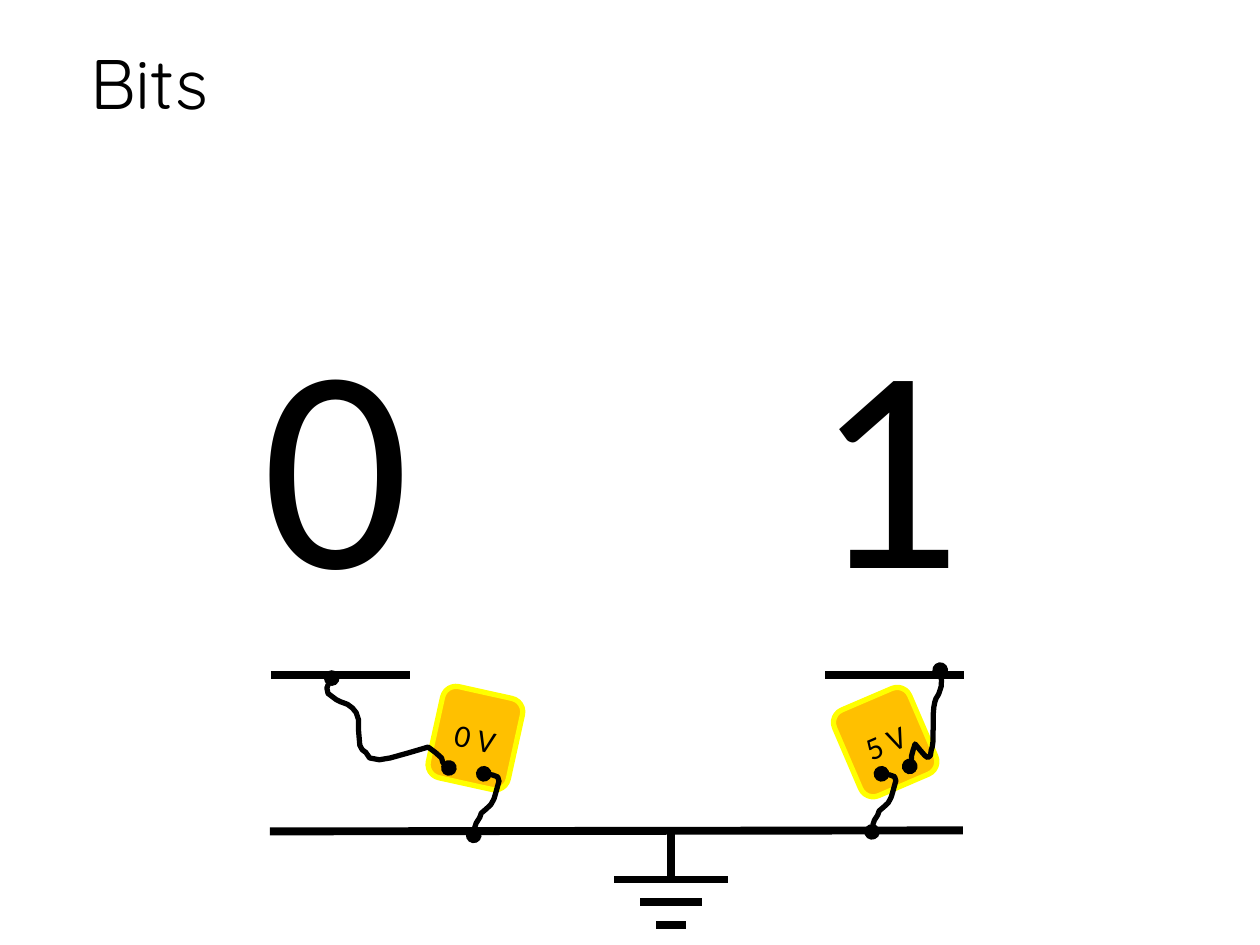
from dataclasses import dataclass

from lxml.etree import SubElement
from pptx import Presentation
from pptx.dml.color import RGBColor as Rgb
from pptx.enum.shapes import MSO_CONNECTOR as Link, MSO_SHAPE as Shape
from pptx.enum.text import MSO_ANCHOR as Anchor, PP_ALIGN as Align
from pptx.oxml.ns import qn
from pptx.util import Cm, Pt


@dataclass(frozen=True)
class Theme:
    ink: Rgb = Rgb(0, 0, 0)
    body: Rgb = Rgb(0xFF, 0xC0, 0)
    rim: Rgb = Rgb(0xFF, 0xFF, 0)
    head: str = "Quicksand"
    font: str = "Calibri"
    title: int = 40
    digit: int = 166
    label: int = 18
    bar: float = 4.5
    wire: float = 3


class Board:
    def __init__(self, slide, theme):
        self.slide = slide
        self.theme = theme

    def letter(self, frame, text, font, size):
        para = frame.paragraphs[0]
        para.text = text
        para.font.name = font
        para.font.size = Pt(size)
        para.font.color.rgb = self.theme.ink
        return para

    def title(self, text, *box):
        frame = self.slide.shapes.add_textbox(*map(Cm, box)).text_frame
        frame.word_wrap = True
        frame.vertical_anchor = Anchor.MIDDLE
        para = self.letter(frame, text, self.theme.head, self.theme.title)
        para.line_spacing = 0.9

    def digit(self, text, *box):
        frame = self.slide.shapes.add_textbox(*map(Cm, box)).text_frame
        frame.word_wrap = False
        self.letter(frame, text, self.theme.font, self.theme.digit)

    def bar(self, *ends):
        line = self.slide.shapes.add_connector(Link.STRAIGHT, *map(Cm, ends))
        line.line.color.rgb = self.theme.ink
        line.line.width = Pt(self.theme.bar)
        SubElement(line._element.spPr, qn("a:effectLst"))

    def meter(self, text, left, top, turn):
        box = map(Cm, (left, top, 1.65, 1.88))
        shape = self.slide.shapes.add_shape(Shape.ROUNDED_RECTANGLE, *box)
        shape.rotation = turn
        shape.shadow.inherit = False
        shape.fill.solid()
        shape.fill.fore_color.rgb = self.theme.body
        shape.line.color.rgb = self.theme.rim
        shape.line.width = Pt(self.theme.wire)
        frame = shape.text_frame
        frame.vertical_anchor = Anchor.MIDDLE
        para = self.letter(frame, text, self.theme.font, self.theme.label)
        para.alignment = Align.CENTER

    def wire(self, curve, left, top, wide, high):
        """Stretch a unit curve over a box; a negative width mirrors it."""
        dots = [(Cm(left + u * wide), Cm(top + v * high)) for u, v in curve]
        pen = self.slide.shapes.build_freeform(*dots[0])
        pen.add_line_segments(dots[1:], close=False)
        shape = pen.convert_to_shape()
        shape.shadow.inherit = False
        shape.fill.background()
        shape.line.color.rgb = self.theme.ink
        shape.line.width = Pt(self.theme.wire)
        stroke = shape._element.spPr.find(qn("a:ln"))
        SubElement(stroke, qn("a:round"))
        for end in ("a:headEnd", "a:tailEnd"):
            SubElement(stroke, qn(end), type="oval")


# Unit curves: from the meter up to the signal, and down to ground
PROBE = [
    (0, 0.99), (0.05, 0.93), (0.06, 0.88), (0.11, 0.82), (0.17, 0.76),
    (0.32, 0.82), (0.48, 0.88), (0.57, 0.9), (0.65, 0.88), (0.68, 0.82),
    (0.71, 0.79), (0.73, 0.74), (0.74, 0.58), (0.74, 0.46), (0.76, 0.38),
    (0.79, 0.33), (0.83, 0.29), (0.89, 0.26), (0.92, 0.24), (0.99, 0.17),
    (1, 0.11), (0.98, 0.04), (0.96, 0),
]
LEAD = [
    (0.4, 0), (0.75, 0.02), (0.95, 0.05), (1, 0.12), (0.86, 0.33),
    (0.8, 0.41), (0.68, 0.5), (0.5, 0.57), (0.3, 0.64), (0.24, 0.71),
    (0.1, 0.8), (0.02, 0.9), (0, 1),
]


def main():
    deck = Presentation()
    deck.slide_width, deck.slide_height = Cm(25.4), Cm(19.05)
    board = Board(deck.slides.add_slide(deck.slide_layouts[6]), Theme())

    # Title and digits
    board.title("Bits", 1.57, -0.08, 21.89, 3.68)
    for text, left in (("0", 5.05), ("1", 16.18)):
        board.digit(text, left, 5.49, 3.51, 7.34)

    # Signal bars and ground rail
    for left in (5.46, 16.64):
        board.bar(left, 13.61, left + 2.8, 13.61)
    board.bar(5.44, 16.76, 19.41, 16.74)

    # Meters with their wires
    board.meter("0 V", 8.76, 13.94, 12.5)
    board.wire(PROBE, 9.05, 13.67, -2.46, 1.83)
    board.wire(LEAD, 9.55, 15.6, 0.51, 1.24)
    board.meter("5 V", 17.02, 14.02, -23.2)
    board.wire(PROBE, 18.34, 13.51, 0.64, 1.96)
    board.wire(LEAD, 17.58, 15.6, 0.48, 1.17)

    # Ground symbol
    mid, top, step = 13.53, 17.73, 0.46
    for row, half in enumerate((1.15, 0.62, 0.3)):
        level = top + row * step
        board.bar(mid - half, level, mid + half, level)
    board.bar(mid, 16.74, mid, top)

    deck.save("out.pptx")


if __name__ == "__main__":
    main()
